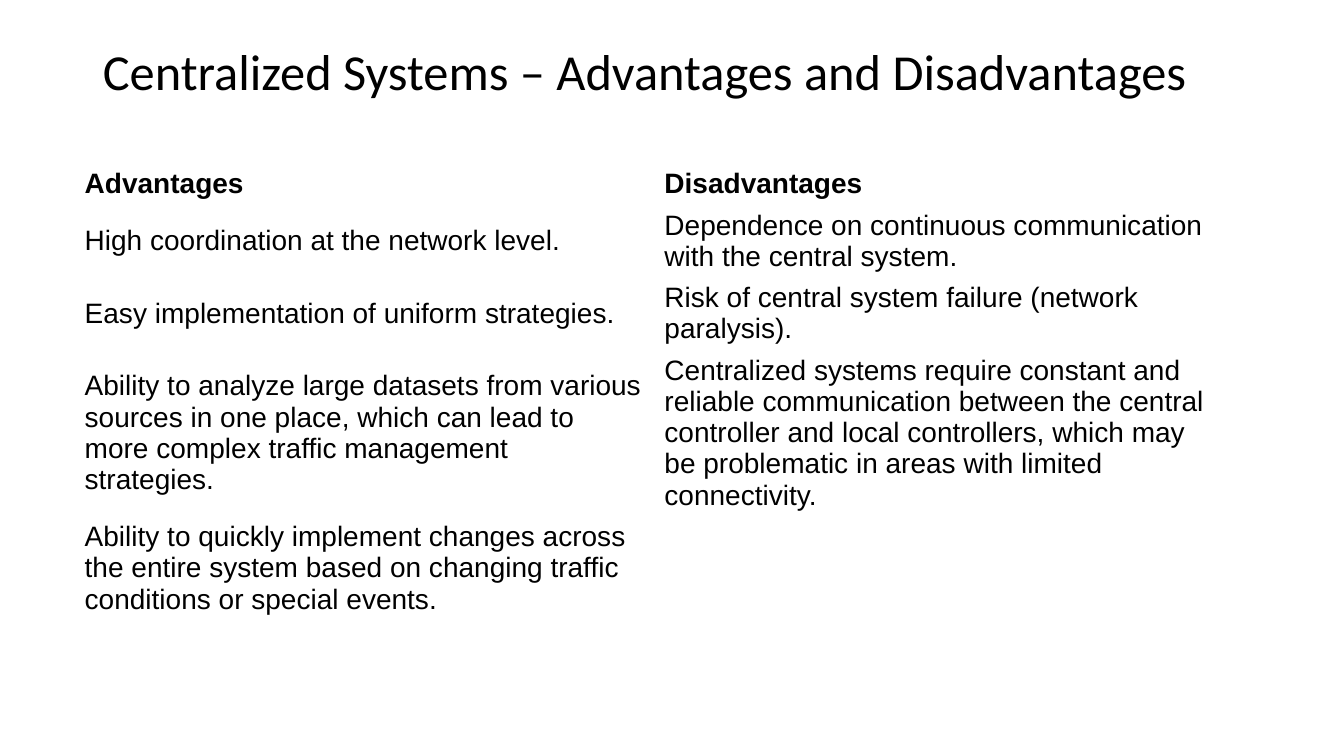
from pptx import Presentation
from pptx.dml.color import RGBColor
from pptx.enum.text import MSO_ANCHOR, MSO_AUTO_SIZE, PP_ALIGN
from pptx.util import Inches, Pt

MIDDLE = MSO_ANCHOR.MIDDLE
NO_AUTOFIT = MSO_AUTO_SIZE.NONE
LEFT = PP_ALIGN.LEFT

COLORS = {"text": "000000"}
TITLE_FONT, BODY_FONT = "Calibri", "Arial"
TITLE_ONLY = 5
PLAIN_TABLE_STYLE = "{2D5ABB26-0587-4C30-8999-92F81FD0307C}"

# Table grid, in inches
COLUMN_WIDTH = 5.75
LINE_HEIGHT, ROW_PADDING = 0.31, 0.1
TABLE_LEFT, TABLE_TOP = 0.74, 1.62

TITLE = "Centralized Systems – Advantages and Disadvantages"

# Each row: number of text lines, advantage, disadvantage
COMPARISON = [
    (1, "Advantages", "Disadvantages"),
    (2, "High coordination at the network level.",
     "Dependence on continuous communication with the central system."),
    (2, "Easy implementation of uniform strategies.",
     "Risk of central system failure (network paralysis)."),
    (5, "Ability to analyze large datasets from various sources in one place, "
        "which can lead to more complex traffic management strategies.",
     "Centralized systems require constant and reliable communication between "
     "the central controller and local controllers, which may be problematic "
     "in areas with limited connectivity."),
    (3, "Ability to quickly implement changes across the entire system based "
        "on changing traffic conditions or special events.", ""),
]


def write_text(frame, text, font=BODY_FONT, size=20, bold=False, spacing=1.0):
    paragraph = frame.paragraphs[0]
    paragraph.alignment = LEFT
    paragraph.line_spacing = spacing
    paragraph.font.size = Pt(size)
    if not text:
        return
    run = paragraph.add_run()
    run.text = text
    run.font.name = font
    run.font.size = Pt(size)
    run.font.bold = bold
    run.font.color.rgb = RGBColor.from_string(COLORS["text"])


def add_title(slide, text):
    title = slide.shapes.title
    title.left, title.top = Inches(0.92), Inches(0.01)
    title.width, title.height = Inches(11.5), Inches(1.45)
    frame = title.text_frame
    frame.auto_size = NO_AUTOFIT
    frame.word_wrap = True
    frame.vertical_anchor = MIDDLE
    write_text(frame, text, font=TITLE_FONT, size=36, spacing=0.9)


def add_comparison(slide, rows):
    heights = [lines * LINE_HEIGHT + ROW_PADDING for lines, *_ in rows]
    holder = slide.shapes.add_table(
        len(rows), 2, Inches(TABLE_LEFT), Inches(TABLE_TOP),
        Inches(2 * COLUMN_WIDTH), Inches(sum(heights)))
    comparison = holder.table

    # Plain look: no header, bands, borders or fills
    comparison.first_row = False
    comparison.horz_banding = False
    comparison._tbl.tblPr.find("{*}tableStyleId").text = PLAIN_TABLE_STYLE

    for row_index, (_, *statements) in enumerate(rows):
        comparison.rows[row_index].height = Inches(heights[row_index])
        for column, statement in enumerate(statements):
            cell = comparison.cell(row_index, column)
            cell.fill.background()
            cell.vertical_anchor = MIDDLE
            write_text(cell.text_frame, statement, bold=row_index == 0)


def main():
    deck = Presentation()
    deck.slide_width, deck.slide_height = Inches(13.33), Inches(7.5)
    slide = deck.slides.add_slide(deck.slide_layouts[TITLE_ONLY])
    add_title(slide, TITLE)
    add_comparison(slide, COMPARISON)
    deck.save("out.pptx")


if __name__ == "__main__":
    main()
